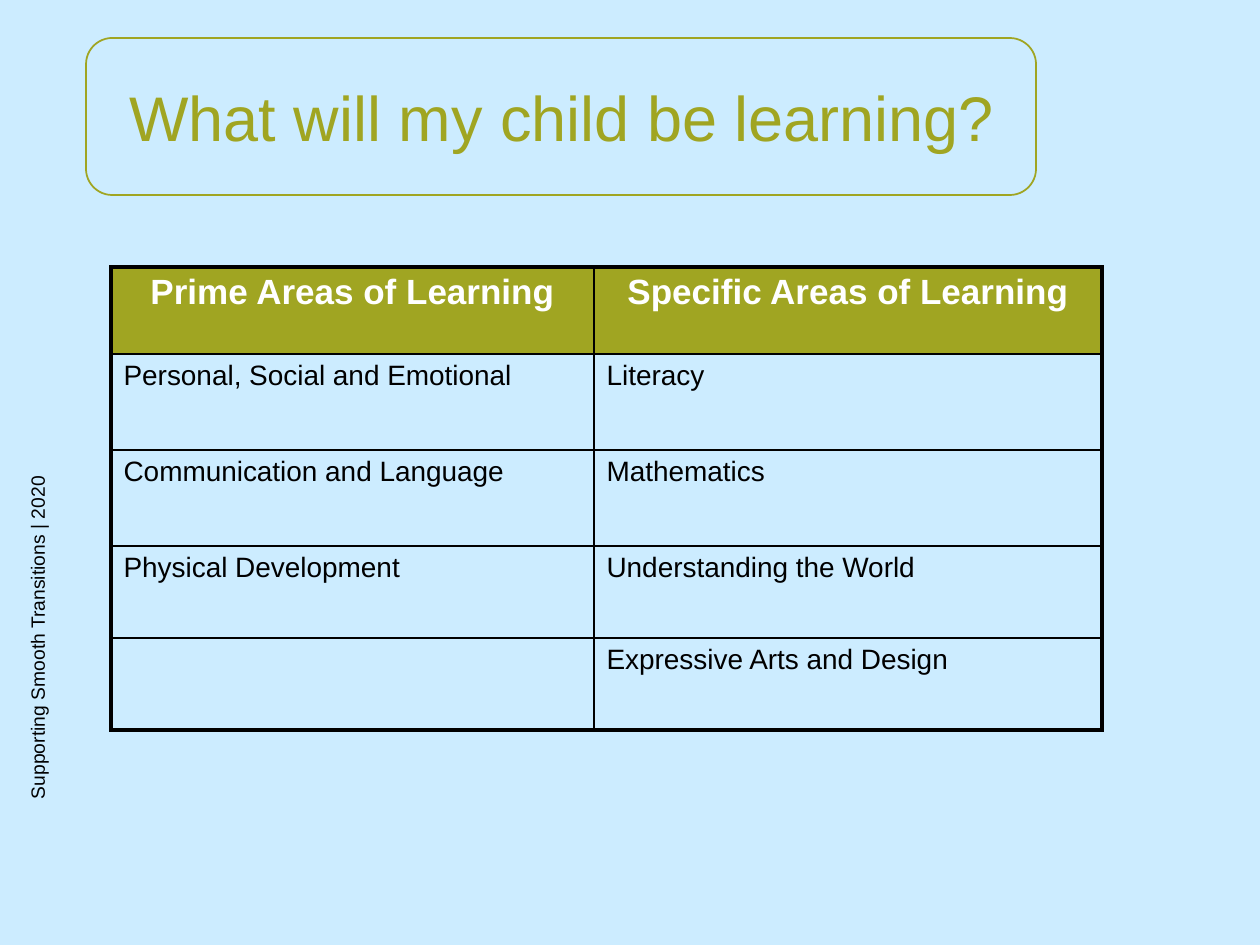
from dataclasses import dataclass

from lxml.etree import SubElement
from pptx import Presentation
from pptx.dml.color import RGBColor
from pptx.enum.shapes import MSO_SHAPE
from pptx.enum.text import MSO_ANCHOR, MSO_AUTO_SIZE, PP_ALIGN
from pptx.oxml.ns import qn
from pptx.util import Emu, Pt

TITLE = "What will my child be learning?"
FOOTER = "Supporting Smooth Transitions | 2020"
AREAS = [
    ("Prime Areas of Learning", "Specific Areas of Learning"),
    ("Personal, Social and Emotional", "Literacy"),
    ("Communication and Language", "Mathematics"),
    ("Physical Development", "Understanding the World"),
    ("", "Expressive Arts and Design"),
]

# Lengths in px, 126 to the inch
PAGE_SIZE = (1260, 945)
FOOTER_BOX = (-168, 599, 400, 25)
FRAME_BOX = (86, 38, 950, 157)
TITLE_BOX = (89, 38, 946, 157)
TABLE_ORIGIN = (111, 267)
COLUMN_WIDTHS = (483, 508)
ROW_HEIGHTS = (87, 96, 96, 92, 92)


@dataclass(frozen=True)
class Theme:
    font: str = "Arial"
    background: RGBColor = RGBColor(0xCC, 0xEC, 0xFF)
    accent: RGBColor = RGBColor(0xA0, 0xA5, 0x22)
    ink: RGBColor = RGBColor(0, 0, 0)
    light: RGBColor = RGBColor(0xFF, 0xFF, 0xFF)
    title_size: int = 36
    header_size: int = 20
    body_size: int = 16
    footer_size: int = 11
    outer_line: float = 2.25
    inner_line: float = 1


THEME = Theme()


def px(length):
    return Emu(round(length * 914400 / 126))


def write(text_frame, text, size, color, align=PP_ALIGN.LEFT, bold=False):
    para = text_frame.paragraphs[0]
    para.text = text
    para.alignment = align
    font = para.font
    font.name, font.size, font.bold = THEME.font, Pt(size), bold
    font.color.rgb = color


def set_borders(cell, outer_sides):
    """Draw all four cell borders, thicker on the outer sides of the table."""
    properties = cell._tc.get_or_add_tcPr()
    for position, side in enumerate("LRTB"):
        width = THEME.outer_line if side in outer_sides else THEME.inner_line
        line = SubElement(properties, qn(f"a:ln{side}"), w=str(Pt(width)))
        fill = SubElement(line, qn("a:solidFill"))
        SubElement(fill, qn("a:srgbClr"), val=str(THEME.ink))
        properties.insert(position, line)


def add_footer(page):
    box = page.shapes.add_textbox(*map(px, FOOTER_BOX))
    box.rotation = 270
    box.text_frame.word_wrap = True
    write(box.text_frame, FOOTER, THEME.footer_size, THEME.ink)


def add_title(page):
    frame = page.shapes.add_shape(MSO_SHAPE.ROUNDED_RECTANGLE, *map(px, FRAME_BOX))
    frame.shadow.inherit = False
    frame.fill.background()
    frame.line.color.rgb = THEME.accent
    frame.line.width = Pt(1)

    title = page.shapes.title
    title.left, title.top, title.width, title.height = map(px, TITLE_BOX)
    title.text_frame.auto_size = MSO_AUTO_SIZE.NONE
    title.text_frame.vertical_anchor = MSO_ANCHOR.MIDDLE
    write(title.text_frame, TITLE, THEME.title_size, THEME.accent, PP_ALIGN.CENTER)
    frame.element.addnext(title.element)


def add_areas_table(page):
    size = (sum(COLUMN_WIDTHS), sum(ROW_HEIGHTS))
    last_row, last_column = len(AREAS) - 1, len(COLUMN_WIDTHS) - 1
    table = page.shapes.add_table(
        last_row + 1, last_column + 1, *map(px, TABLE_ORIGIN + size)).table
    table.first_row = table.horz_banding = False
    for column, width in zip(table.columns, COLUMN_WIDTHS):
        column.width = px(width)
    for row, height in zip(table.rows, ROW_HEIGHTS):
        row.height = px(height)

    for r, names in enumerate(AREAS):
        for c, name in enumerate(names):
            cell = table.cell(r, c)
            if r == 0:
                cell.fill.solid()
                cell.fill.fore_color.rgb = THEME.accent
                write(cell.text_frame, name, THEME.header_size, THEME.light,
                      PP_ALIGN.CENTER, bold=True)
            else:
                cell.fill.background()
                write(cell.text_frame, name, THEME.body_size, THEME.ink)
            edges = {"L": c == 0, "R": c == last_column,
                     "T": r == 0, "B": r == last_row}
            set_borders(cell, [side for side, outer in edges.items() if outer])


def main():
    deck = Presentation()
    deck.slide_width, deck.slide_height = map(px, PAGE_SIZE)
    page = deck.slides.add_slide(deck.slide_layouts.get_by_name("Title Only"))
    page.background.fill.solid()
    page.background.fill.fore_color.rgb = THEME.background
    add_footer(page)
    add_title(page)
    add_areas_table(page)
    deck.save("out.pptx")


if __name__ == "__main__":
    main()
